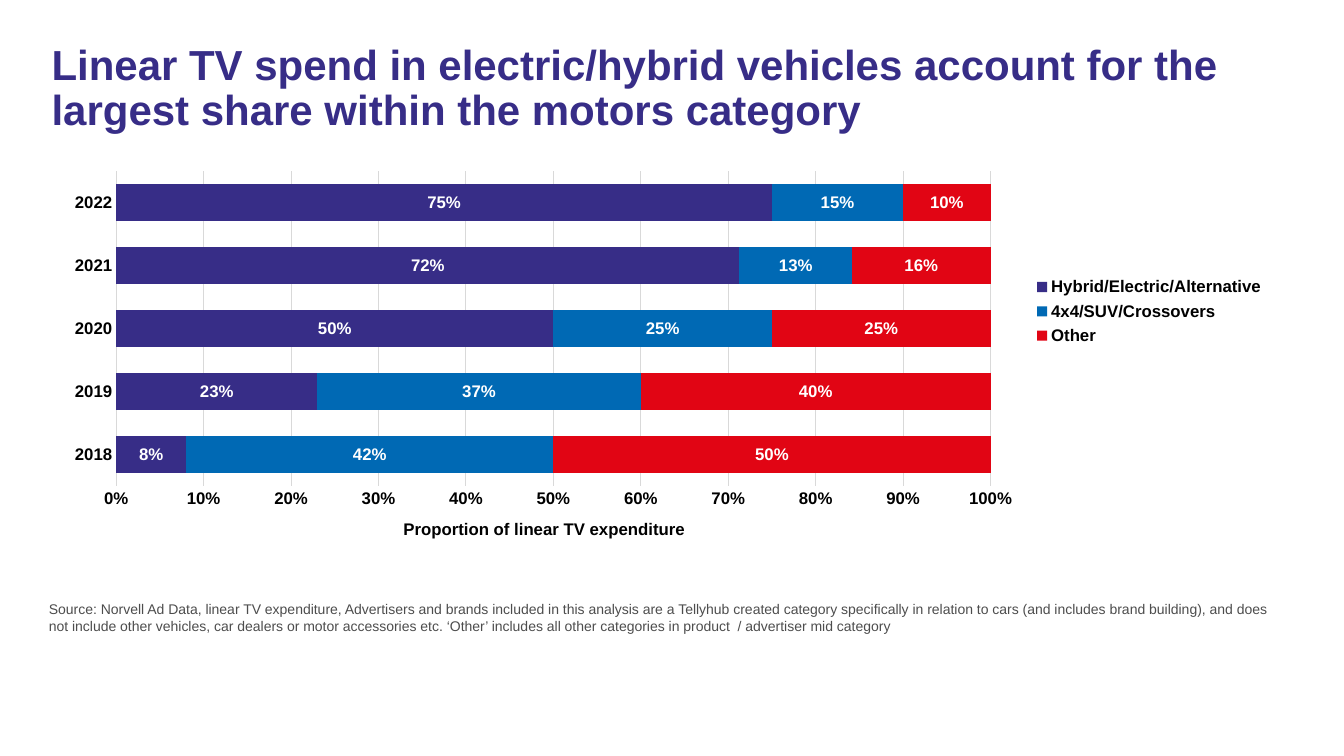
from dataclasses import dataclass

from lxml import etree
from pptx import Presentation
from pptx.chart.data import CategoryChartData
from pptx.dml.color import RGBColor
from pptx.enum.chart import XL_CHART_TYPE, XL_LABEL_POSITION, XL_LEGEND_POSITION, XL_TICK_MARK
from pptx.oxml.ns import qn
from pptx.util import Inches, Pt

STACKED = XL_CHART_TYPE.BAR_STACKED_100
CENTER = XL_LABEL_POSITION.CENTER
RIGHT = XL_LEGEND_POSITION.RIGHT
NO_TICK = XL_TICK_MARK.NONE
FACE = "Arial"
WIDE, HIGH = 13.33, 7.5
YEARS = ["2018", "2019", "2020", "2021", "2022"]


@dataclass
class Box:
    left: float
    top: float
    width: float
    height: float

    def place(self) -> tuple:
        return (Inches(WIDE * self.left), Inches(HIGH * self.top),
                Inches(WIDE * self.width), Inches(HIGH * self.height))


@dataclass
class Label:
    box: Box
    text: str
    size: float
    color: str
    bold: bool
    pitch: float


@dataclass
class Group:
    name: str
    color: str
    shares: list[float]


LABELS = [
    Label(Box(0.031, 0.052, 0.93, 0.15),
          "Linear TV spend in electric/hybrid vehicles account for the "
          "largest share within the motors category", 30, "372D87", True, 0.9),
    Label(Box(0.029, 0.788, 0.93, 0.044),
          "Source: Norvell Ad Data, linear TV expenditure, Advertisers and brands included "
          "in this analysis are a Tellyhub created category specifically in relation to cars "
          "(and includes brand building), and does not include other vehicles, car dealers or "
          "motor accessories etc. ‘Other’ includes all other categories in product  / "
          "advertiser mid category", 10, "4D4D4D", False, 1.0),
]
GROUPS = [
    Group("Hybrid/Electric/Alternative", "372D87", [0.08, 0.23, 0.5, 0.72, 0.75]),
    Group("4x4/SUV/Crossovers", "0069B4", [0.42, 0.37, 0.25, 0.13, 0.15]),
    Group("Other", "E10514", [0.5, 0.4, 0.25, 0.16, 0.1]),
]


def tint(code: str) -> RGBColor:
    return RGBColor.from_string(code)


def style(font, size: float, color: str, bold: bool) -> None:
    font.name = FACE
    font.size = Pt(size)
    font.bold = bold
    font.color.rgb = tint(color)


def rule(line) -> None:
    line.color.rgb = tint("D9D9D9")
    line.width = Pt(0.75)


def write(slide, label: Label) -> None:
    frame = slide.shapes.add_textbox(*label.box.place()).text_frame
    frame.word_wrap = True
    frame.text = label.text
    line = frame.paragraphs[0]
    line.line_spacing = label.pitch
    style(line.runs[0].font, label.size, label.color, label.bold)


def fix(node, index: int, parts: dict[str, str]) -> None:
    for old in node.findall(qn("c:layout")):
        node.remove(old)
    layout = etree.Element(qn("c:layout"))
    manual = etree.SubElement(layout, qn("c:manualLayout"))
    for name, value in parts.items():
        etree.SubElement(manual, qn(f"c:{name}")).set("val", value)
    node.insert(index, layout)


def plot_bars(slide, box: Box) -> None:
    data = CategoryChartData(number_format="0%")
    data.categories = YEARS
    for group in GROUPS:
        data.add_series(group.name, group.shares)
    chart = slide.shapes.add_chart(STACKED, *box.place(), data).chart
    chart.has_title = False
    style(chart.font, 12, "000000", True)

    plot = chart.plots[0]
    plot.gap_width = 70
    plot.overlap = 100
    plot.vary_by_categories = False
    for series, group in zip(plot.series, GROUPS):
        series.format.fill.solid()
        series.format.fill.fore_color.rgb = tint(group.color)
        marks = series.data_labels
        marks.show_value = True
        marks.number_format = "0%"
        marks.number_format_is_linked = False
        marks.position = CENTER
        style(marks.font, 12, "FFFFFF", True)

    years, scale = chart.category_axis, chart.value_axis
    for axis in (years, scale):
        axis.major_tick_mark = NO_TICK
        axis.minor_tick_mark = NO_TICK
        style(axis.tick_labels.font, 12, "000000", True)
    rule(years.format.line)
    scale.format.line.fill.background()
    scale.has_major_gridlines = True
    rule(scale.major_gridlines.format.line)
    scale.minimum_scale, scale.maximum_scale, scale.major_unit = 0, 1, 0.1
    scale.tick_labels.number_format = "0%"
    scale.tick_labels.number_format_is_linked = False

    title = scale.axis_title
    title.text_frame.text = "Proportion of linear TV expenditure"
    style(title.text_frame.paragraphs[0].runs[0].font, 12, "000000", True)

    chart.has_legend = True
    legend = chart.legend
    legend.position = RIGHT
    legend.include_in_layout = False
    style(legend.font, 12, "000000", True)

    edge = {"xMode": "edge", "yMode": "edge"}
    area = chart.element.find(".//" + qn("c:plotArea"))
    fix(area, 0, {"layoutTarget": "inner", **edge,
                  "x": "0.053", "y": "0.02", "w": "0.711", "h": "0.793"})
    fix(area.find(".//" + qn("c:title")), 1, {**edge, "x": "0.284", "y": "0.887"})
    fix(chart.element.find(".//" + qn("c:legend")), 1,
        {**edge, "x": "0.798", "y": "0.273", "w": "0.19", "h": "0.2"})


def main() -> None:
    deck = Presentation()
    deck.slide_width, deck.slide_height = Inches(WIDE), Inches(HIGH)
    slide = deck.slides.add_slide(deck.slide_layouts[6])
    for label in LABELS:
        write(slide, label)
    plot_bars(slide, Box(0.038, 0.216, 0.915, 0.525))
    deck.save("out.pptx")


if __name__ == "__main__":
    main()
